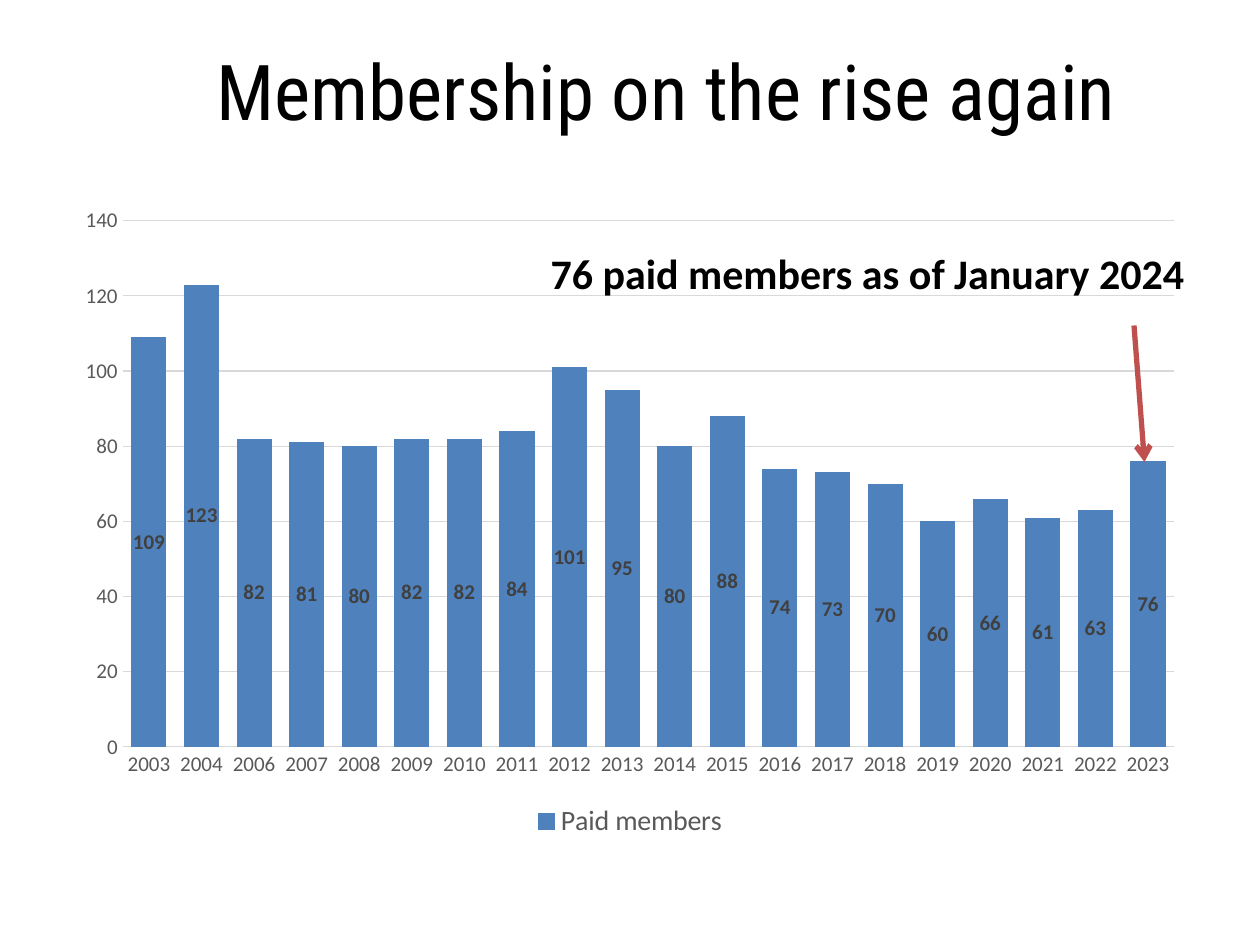
from lxml import etree
from pptx import Presentation
from pptx.chart.data import CategoryChartData
from pptx.dml.color import RGBColor
from pptx.enum import chart as charts, shapes, text
from pptx.oxml.ns import qn
from pptx.util import Pt

COLORS = {"text": "000000", "axis": "595959", "grid": "D9D9D9",
          "bar": "4F81BD", "label": "404040", "arrow": "C0504D"}
YEARS = [2003, 2004, *range(2006, 2024)]
MEMBERS = [109, 123, 82, 81, 80, 82, 82, 84, 101, 95,
           80, 88, 74, 73, 70, 60, 66, 61, 63, 76]


def color(name):
    return RGBColor.from_string(COLORS[name])


def format_font(font, size, name="Calibri", fill="text", bold=False):
    font.size, font.name, font.bold = Pt(size), name, bold
    font.color.rgb = color(fill)


def format_line(line, fill, width):
    line.color.rgb = color(fill)
    line.width = Pt(width)


def place(shape, left, top, width, height):
    shape.left, shape.top = Pt(left), Pt(top)
    shape.width, shape.height = Pt(width), Pt(height)


def write_text(box, words, align, anchor=text.MSO_ANCHOR.TOP, **font):
    frame = box.text_frame
    frame.word_wrap = True
    frame.vertical_anchor = anchor
    para = frame.paragraphs[0]
    para.alignment = align
    span = para.add_run()
    span.text = words
    format_font(span.font, **font)


def add_title(page, words):
    title = page.shapes.title
    place(title, 78, 6, 606, 90)
    write_text(title, words, text.PP_ALIGN.CENTER, text.MSO_ANCHOR.MIDDLE,
               size=44, name="Roboto Condensed")


def add_member_chart(page):
    data = CategoryChartData()
    data.categories = [str(year) for year in YEARS]
    data.add_series("Paid members", MEMBERS)
    chart = page.shapes.add_chart(
        charts.XL_CHART_TYPE.COLUMN_STACKED,
        Pt(36), Pt(111.6), Pt(648), Pt(370.8), data).chart
    chart.has_title = False
    format_font(chart.font, 10)

    for axis in (chart.category_axis, chart.value_axis):
        axis.major_tick_mark = axis.minor_tick_mark = charts.XL_TICK_MARK.NONE
        format_font(axis.tick_labels.font, 12, fill="axis")
    format_line(chart.category_axis.format.line, "grid", 0.75)
    values = chart.value_axis
    values.minimum_scale, values.maximum_scale, values.major_unit = 0, 140, 20
    values.format.line.fill.background()
    format_line(values.major_gridlines.format.line, "grid", 0.75)

    chart.has_legend = True
    chart.legend.position = charts.XL_LEGEND_POSITION.BOTTOM
    chart.legend.include_in_layout = False
    format_font(chart.legend.font, 16, fill="axis")

    plot = chart.plots[0]
    plot.gap_width, plot.overlap, plot.vary_by_categories = 50, 100, False
    bars = plot.series[0]
    bars.format.fill.solid()
    bars.format.fill.fore_color.rgb = color("bar")
    labels = bars.data_labels
    labels.show_value = True
    labels.position = charts.XL_LABEL_POSITION.CENTER
    format_font(labels.font, 12, fill="label", bold=True)


def add_callout(page, words):
    box = page.shapes.add_textbox(Pt(174), Pt(138), Pt(510), Pt(36))
    write_text(box, words, text.PP_ALIGN.RIGHT, size=24, bold=True)


def add_arrow(page, start, end):
    arrow = page.shapes.add_connector(
        shapes.MSO_CONNECTOR.STRAIGHT, *(Pt(n) for n in (*start, *end)))
    format_line(arrow.line, "arrow", 3)
    etree.SubElement(arrow.line._get_or_add_ln(), qn("a:tailEnd"), type="arrow")
    etree.SubElement(arrow._element.spPr, qn("a:effectLst"))


def main():
    deck = Presentation()
    deck.slide_width, deck.slide_height = Pt(720), Pt(540)
    page = deck.slides.add_slide(deck.slide_layouts[5])
    add_title(page, "Membership on the rise again")
    add_member_chart(page)
    add_callout(page, "76 paid members as of January 2024")
    add_arrow(page, (648, 186), (654, 264))
    deck.save("out.pptx")


if __name__ == "__main__":
    main()
